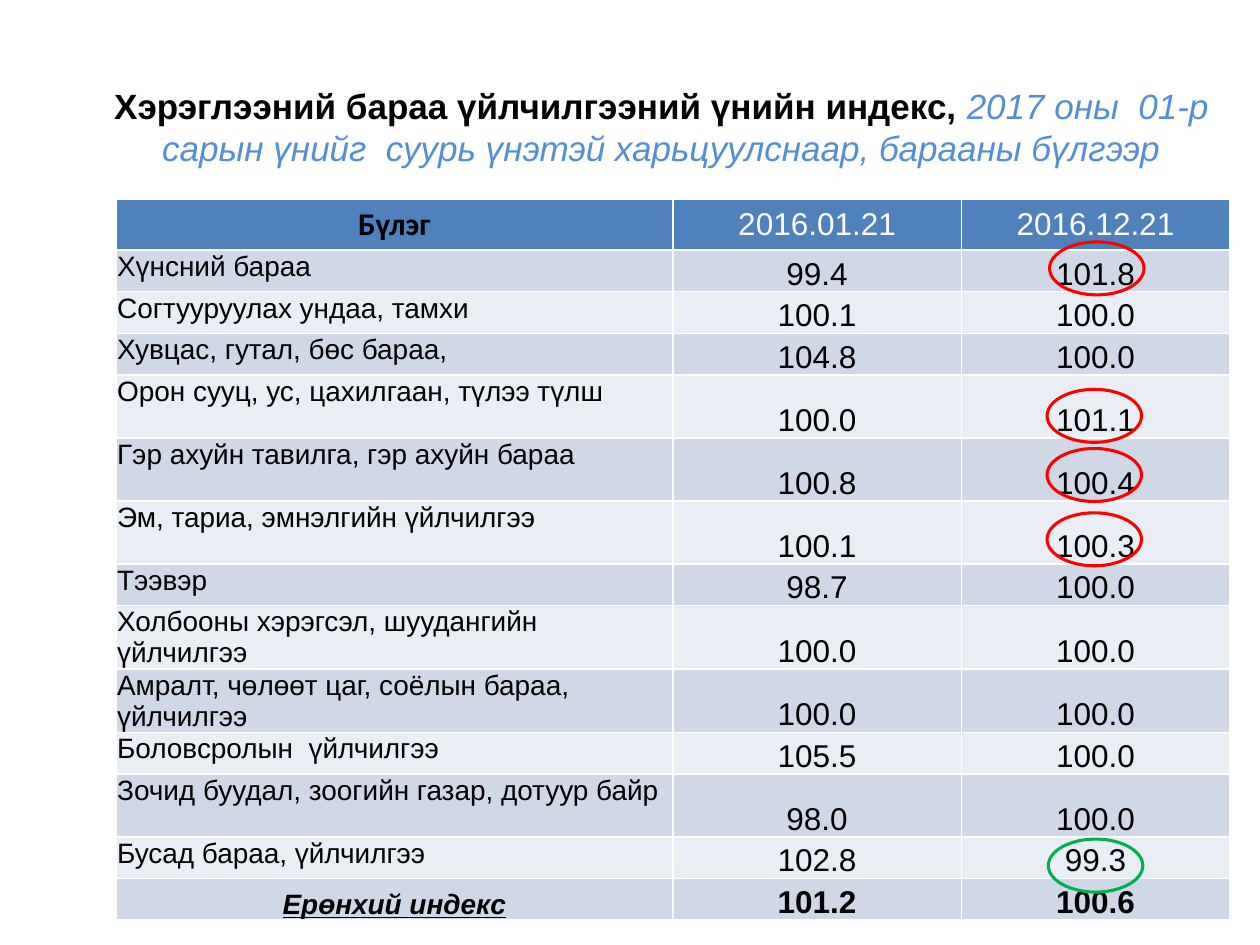
from dataclasses import dataclass
from itertools import accumulate

from pptx import Presentation
from pptx.dml.color import RGBColor
from pptx.enum.shapes import MSO_SHAPE
from pptx.enum.text import MSO_ANCHOR, PP_ALIGN
from pptx.util import Inches, Pt

LEFT, CENTER = PP_ALIGN.LEFT, PP_ALIGN.CENTER
TOP, MIDDLE, BOTTOM = MSO_ANCHOR.TOP, MSO_ANCHOR.MIDDLE, MSO_ANCHOR.BOTTOM


@dataclass(frozen=True)
class Theme:
    font: str = "Arial"
    header_font: str = "Calibri"
    title_size: int = 20
    value_size: int = 18
    label_size: int = 16
    black: str = "000000"
    white: str = "FFFFFF"
    accent: str = "558ED5"
    header: str = "4F81BD"
    bands: tuple = ("D0D8E8", "E9EDF4")
    rise: str = "FF0000"
    fall: str = "00B050"


THEME = Theme()

TITLE = "Хэрэглээний бараа үйлчилгээний үнийн индекс, "
SUBTITLE = "2017 оны  01-р сарын үнийг  суурь үнэтэй харьцуулснаар, барааны бүлгээр"
HEADER = ("Бүлэг", "2016.01.21", "2016.12.21")
SHORT, TALL = 0.33, 0.5
ROWS = [  # group, January, December, row height
    ("Хүнсний бараа", "99.4", "101.8", SHORT),
    ("Согтууруулах ундаа, тамхи", "100.1", "100.0", SHORT),
    ("Хувцас, гутал, бөс бараа,", "104.8", "100.0", SHORT),
    ("Орон сууц, ус, цахилгаан, түлээ түлш", "100.0", "101.1", TALL),
    ("Гэр ахуйн тавилга, гэр ахуйн бараа", "100.8", "100.4", TALL),
    ("Эм, тариа, эмнэлгийн үйлчилгээ", "100.1", "100.3", TALL),
    ("Тээвэр", "98.7", "100.0", SHORT),
    ("Холбооны хэрэгсэл, шуудангийн үйлчилгээ", "100.0", "100.0", TALL),
    ("Амралт, чөлөөт цаг, соёлын бараа, үйлчилгээ", "100.0", "100.0", TALL),
    ("Боловсролын  үйлчилгээ", "105.5", "100.0", SHORT),
    ("Зочид буудал, зоогийн газар, дотуур байр", "98.0", "100.0", TALL),
    ("Бусад бараа, үйлчилгээ", "102.8", "99.3", SHORT),
    ("Ерөнхий индекс", "101.2", "100.6", SHORT),
]
# table row: (left edge, drop below the row's top, colour)
RINGS = {
    1: (8.33, -0.04, THEME.rise),
    4: (8.31, 0.14, THEME.rise),
    5: (8.31, 0.11, THEME.rise),
    6: (8.31, 0.12, THEME.rise),
    12: (8.32, 0.05, THEME.fall),
}
RING_SIZE = (0.75, 0.42)

TABLE_LEFT, TABLE_TOP = 0.92, 1.58
COLUMNS = (4.42, 2.29, 2.13)
HEIGHTS = [0.38] + [row[-1] for row in ROWS]
ROW_TOPS = list(accumulate(HEIGHTS, initial=TABLE_TOP))


def add_text(paragraph, text, *, size, color=THEME.black, font=THEME.font,
             bold=False, italic=False, underline=False, align=CENTER):
    paragraph.alignment = align
    run = paragraph.add_run()
    run.text = text
    run.font.name = font
    run.font.size = Pt(size)
    run.font.color.rgb = RGBColor.from_string(color)
    run.font.bold, run.font.italic, run.font.underline = bold, italic, underline


def fill_cell(cell, text, fill, anchor, margins=None, **text_format):
    """Margins are left, top, right, bottom in inches; None keeps the default."""
    cell.fill.solid()
    cell.fill.fore_color.rgb = RGBColor.from_string(fill)
    cell.vertical_anchor = anchor
    if margins:
        (cell.margin_left, cell.margin_top,
         cell.margin_right, cell.margin_bottom) = map(Inches, margins)
    add_text(cell.text_frame.paragraphs[0], text, **text_format)


def add_title(slide):
    title = slide.shapes.title
    title.left, title.top, title.width, title.height = map(
        Inches, (0.75, 0.67, 9, 0.67))
    title.text_frame.vertical_anchor = MIDDLE
    paragraph = title.text_frame.paragraphs[0]
    add_text(paragraph, TITLE, size=THEME.title_size, bold=True)
    add_text(paragraph, SUBTITLE, size=THEME.title_size, color=THEME.accent, italic=True)


def add_index_table(slide):
    table = slide.shapes.add_table(
        len(HEIGHTS), len(COLUMNS), Inches(TABLE_LEFT), Inches(TABLE_TOP),
        Inches(sum(COLUMNS)), Inches(sum(HEIGHTS))).table
    for column, width in zip(table.columns, COLUMNS):
        column.width = Inches(width)
    for row, height in zip(table.rows, HEIGHTS):
        row.height = Inches(height)

    no_margins, label_margins = (0, 0, 0, 0), (0.01, 0.01, 0.01, 0)
    group, *dates = HEADER
    fill_cell(table.cell(0, 0), group, THEME.header, TOP,
              size=THEME.value_size, font=THEME.header_font, bold=True)
    for column, date in enumerate(dates, 1):
        fill_cell(table.cell(0, column), date, THEME.header, MIDDLE, no_margins,
                  size=THEME.value_size, color=THEME.white)

    for index, (label, *values, _) in enumerate(ROWS, 1):
        total = index == len(ROWS)
        band = THEME.bands[(index - 1) % 2]
        fill_cell(table.cell(index, 0), label, band, BOTTOM if total else TOP,
                  label_margins, size=THEME.label_size, bold=total, italic=total,
                  underline=total, align=CENTER if total else LEFT)
        for column, value in enumerate(values, 1):
            fill_cell(table.cell(index, column), value, band, BOTTOM, no_margins,
                      size=THEME.value_size, bold=total)


def add_rings(slide):
    for row, (left, drop, color) in RINGS.items():
        ring = slide.shapes.add_shape(
            MSO_SHAPE.OVAL, *map(Inches, (left, ROW_TOPS[row] + drop, *RING_SIZE)))
        ring.shadow.inherit = False
        ring.fill.background()
        ring.line.color.rgb = RGBColor.from_string(color)
        ring.line.width = Pt(1.75)


def main():
    presentation = Presentation()
    presentation.slide_width, presentation.slide_height = Inches(10), Inches(7.5)
    slide = presentation.slides.add_slide(presentation.slide_layouts[5])
    add_title(slide)
    add_index_table(slide)
    add_rings(slide)
    presentation.save("out.pptx")


if __name__ == "__main__":
    main()
